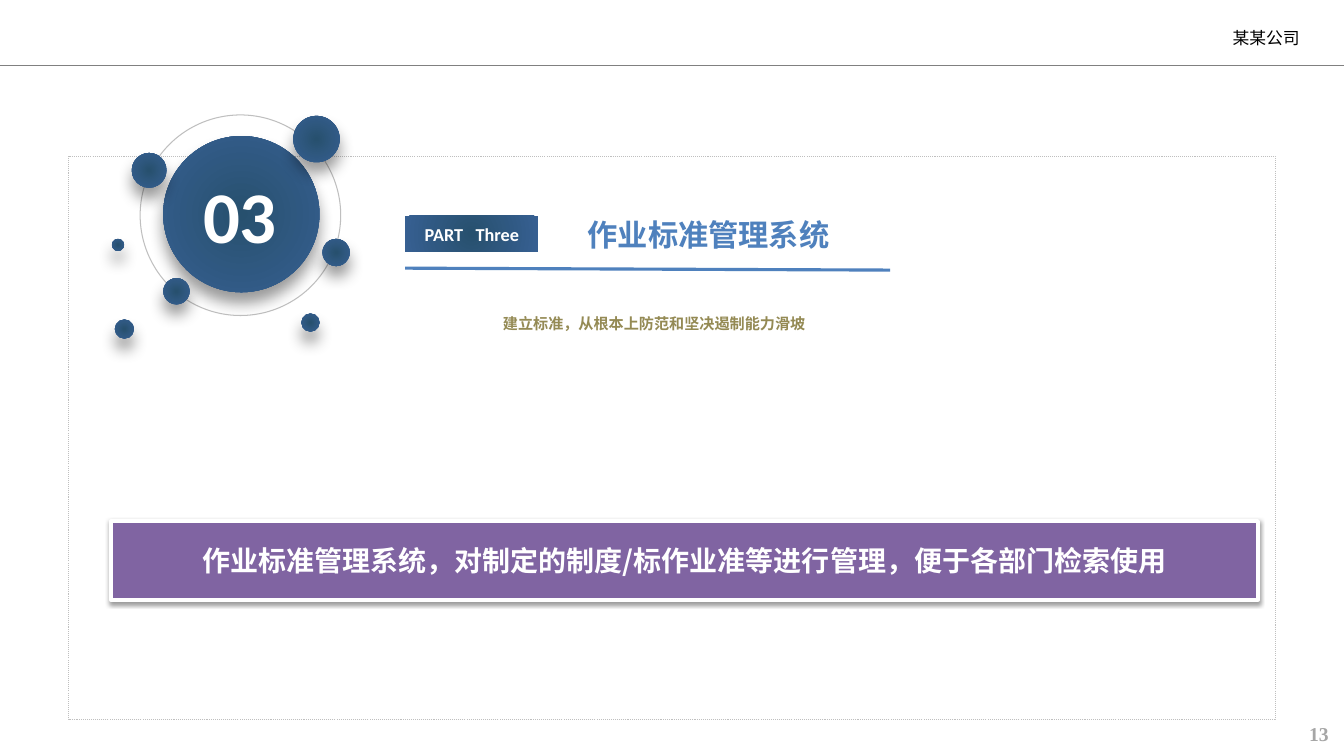
from lxml.etree import SubElement
from pptx import Presentation
from pptx.dml.color import RGBColor
from pptx.enum.dml import MSO_LINE_DASH_STYLE as Dash
from pptx.enum.shapes import MSO_CONNECTOR as Wire, MSO_SHAPE as Kind
from pptx.enum.text import MSO_ANCHOR as Anchor, PP_ALIGN as Align
from pptx.oxml import parse_xml
from pptx.oxml.ns import nsdecls, qn
from pptx.util import Inches, Pt

WIDE, HIGH = Inches(13.333), Inches(7.5)
WHITE = RGBColor(0xFF, 0xFF, 0xFF)
BLACK = RGBColor(0x00, 0x00, 0x00)
PALE = RGBColor(0xBF, 0xBF, 0xBF)
GREY = RGBColor(0x80, 0x80, 0x80)
ASH = RGBColor(0xA6, 0xA6, 0xA6)
BLUE = RGBColor(0x4F, 0x81, 0xBD)
DEEP = RGBColor(0x27, 0x50, 0x6E)
NAVY = RGBColor(0x37, 0x60, 0x92)
OLIVE = RGBColor(0x94, 0x8A, 0x54)
PURPLE = RGBColor(0x80, 0x64, 0xA2)
HAN = "Noto Sans CJK SC"

DOTS = [
    (23.55, 18.4, 6.13), (11.1, 22.53, 4.6), (9.26, 43.53, 2.53),
    (13.13, 38.53, 3.47), (25.01, 33.4, 3.6), (23.1, 42.67, 2.4),
    (8.78, 32.4, 1.6),
]


def across(share):
    return round(WIDE * share / 100)


def down(share):
    return round(HIGH * share / 100)


def area(left, top, width, height):
    return across(left), down(top), across(width), down(height)


def disc(mid, row, size):
    side = down(size)
    return across(mid) - side // 2, down(row) - side // 2, side, side


def add_shape(slide, kind, place, fill=None, edge=None, weight=0.75):
    shape = slide.shapes.add_shape(kind, *place)
    shape.shadow.inherit = False
    if fill is None:
        shape.fill.background()
    else:
        shape.fill.solid()
        shape.fill.fore_color.rgb = fill
    if edge is None:
        shape.line.fill.background()
    else:
        shape.line.color.rgb = edge
        shape.line.width = Pt(weight)
    return shape


def glow(shape):
    props = shape.element.spPr
    grad = parse_xml(
        f'<a:gradFill {nsdecls("a")} rotWithShape="1"><a:gsLst>'
        f'<a:gs pos="0"><a:srgbClr val="{DEEP}"/></a:gs>'
        f'<a:gs pos="100000"><a:srgbClr val="{NAVY}"/></a:gs></a:gsLst>'
        '<a:path path="circle"><a:fillToRect l="50000" t="50000" '
        'r="50000" b="50000"/></a:path></a:gradFill>')
    props.replace(props.find(qn("a:noFill")), grad)


def shade(shape, blur, drop, alpha):
    effects = shape.element.spPr.find(qn("a:effectLst"))
    effects.append(parse_xml(
        f'<a:outerShdw {nsdecls("a")} blurRad="{Pt(blur)}" '
        f'dist="{Pt(drop)}" dir="5400000" algn="t" rotWithShape="0">'
        f'<a:srgbClr val="{BLACK}"><a:alpha val="{alpha * 1000}"/>'
        '</a:srgbClr></a:outerShdw>'))


def add_ball(slide, place):
    ball = add_shape(slide, Kind.OVAL, place)
    glow(ball)
    shade(ball, 11, 8, 40)


def add_line(slide, start, end, color, weight):
    line = slide.shapes.add_connector(
        Wire.STRAIGHT, across(start[0]), down(start[1]),
        across(end[0]), down(end[1]))
    line.line.color.rgb = color
    line.line.width = Pt(weight)
    SubElement(line.element.spPr, qn("a:effectLst"))


def write(shape, words, size, color, face, align=Align.LEFT, bold=True,
          anchor=Anchor.TOP, wrap=True, gap=0, space=None):
    frame = shape.text_frame
    frame.word_wrap = wrap
    frame.vertical_anchor = anchor
    par = frame.paragraphs[0]
    par.alignment = align
    par.line_spacing = space
    look = {"size": Pt(size), "name": face, "bold": bold}
    for word in words.partition(" ") if gap else [words]:
        run = par.add_run()
        run.text = word
        for key, value in look.items():
            setattr(run.font, key, value)
        run.font.color.rgb = color
        props = run._r.get_or_add_rPr()
        props.find(qn("a:latin")).addnext(
            parse_xml(f'<a:ea {nsdecls("a")} typeface="{HAN}"/>'))
        if word == " ":
            props.set("spc", str(gap * 100))


def add_text(slide, place, *args, **look):
    box = slide.shapes.add_textbox(*place)
    write(box, *args, **look)
    return box


def add_base(slide):
    add_text(slide, area(90.98, 94.8, 8.62, 4.53), "13", 14, ASH,
             "Times New Roman", align=Align.RIGHT)
    frame = add_shape(slide, Kind.RECTANGLE,
                      area(5.1, 20.67, 89.78, 74.53), edge=PALE)
    frame.line.dash_style = Dash.ROUND_DOT
    firm = add_text(slide, area(90.98, 3.47, 6.3, 3.07), "某某公司", 12,
                    BLACK, "Arial", bold=False, anchor=Anchor.MIDDLE)
    pads = {"margin_left": 0.1, "margin_top": 0.01,
            "margin_right": 0.02, "margin_bottom": 0.01}
    for key, value in pads.items():
        setattr(firm.text_frame, key, Inches(value))
    add_line(slide, (0, 8.67), (100, 8.67), GREY, 1.25)


def add_badge(slide):
    add_shape(slide, Kind.OVAL, disc(17.89, 28.47, 26.53), edge=PALE)
    add_ball(slide, disc(17.96, 28.33, 20.67))
    add_text(slide, area(14.33, 21.87, 7.05, 13.07), "03", 52, WHITE,
             "Calibri", align=Align.CENTER, wrap=False)
    for dot in DOTS:
        add_ball(slide, disc(*dot))


def add_head(slide):
    add_line(slide, (30.15, 35.47), (66.23, 35.73), BLUE, 2.25)
    tag = add_shape(slide, Kind.RECTANGLE, area(30.15, 28.53, 9.9, 4.8))
    glow(tag)
    write(tag, "PART Three", 13, WHITE, "Calibri", align=Align.CENTER,
          anchor=Anchor.MIDDLE, gap=6)
    add_text(slide, area(42.98, 28, 29.18, 6.27), "作业标准管理系统",
             21.6, BLUE, "Calibri")
    add_text(slide, area(36.68, 39.73, 39.3, 4.53),
             "建立标准，从根本上防范和坚决遏制能力滑坡", 10.8, OLIVE,
             "Times New Roman", space=1.5)


def add_banner(slide):
    banner = add_shape(slide, Kind.RECTANGLE,
                       area(8.25, 68.93, 85.35, 10.4), PURPLE, WHITE, 3)
    shade(banner, 3.1, 1.6, 38)
    write(banner, "作业标准管理系统，对制定的制度/标作业准等进行管理，便于各部门检索使用",
          20, WHITE, HAN, align=Align.CENTER, anchor=Anchor.MIDDLE)


def main():
    deck = Presentation()
    deck.slide_width, deck.slide_height = WIDE, HIGH
    slide = deck.slides.add_slide(deck.slide_layouts[6])
    add_base(slide)
    add_head(slide)
    add_badge(slide)
    add_banner(slide)
    deck.save("out.pptx")


if __name__ == "__main__":
    main()
